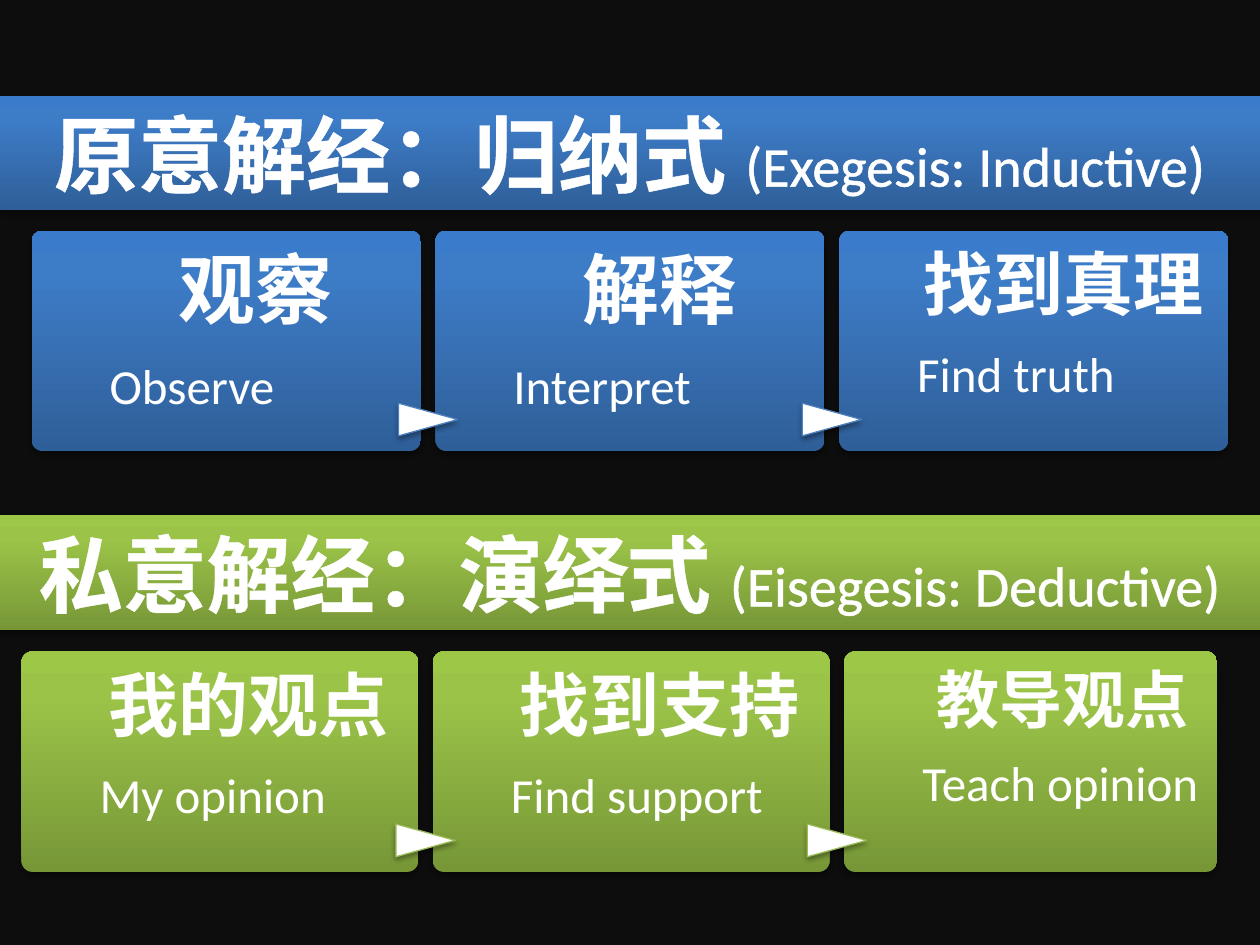
from dataclasses import dataclass

from lxml.etree import SubElement
from pptx import Presentation
from pptx.dml.color import RGBColor
from pptx.enum.shapes import MSO_SHAPE as Shape
from pptx.enum.text import MSO_ANCHOR as Anchor, MSO_AUTO_SIZE as AutoSize, PP_ALIGN as Align
from pptx.oxml.ns import qn
from pptx.util import Inches, Pt


@dataclass(frozen=True)
class Palette:
    stops: tuple  # (position in percent, colour), from the bottom up
    outline: str


class Theme:
    font = "Calibri"
    background = "0D0D0D"
    white = "FFFFFF"
    shadow = "000000"
    blue = Palette(((0, "2F5F99"), (80, "3D7CC7"), (100, "3A7CCB")), "4F81BD")
    green = Palette(((0, "779737"), (80, "9BC348"), (100, "9DC746")), "9BBB59")
    heading_size = 48
    subheading_size = 32
    caption_size = 28


def rgb(colour):
    return RGBColor.from_string(colour)


def add_element(parent, tag, **attributes):
    return SubElement(parent, qn(tag), {k: str(v) for k, v in attributes.items()})


def set_gradient(shape, palette):
    shape.fill.gradient()
    shape.fill.gradient_angle = 90
    stop_list = next(shape._element.spPr.iter(qn("a:gsLst")))
    for stop in list(stop_list):
        stop_list.remove(stop)
    for position, colour in palette.stops:
        stop = add_element(stop_list, "a:gs", pos=position * 1000)
        add_element(stop, "a:srgbClr", val=colour)
    shape.line.fill.background()


def set_shadow(shape):
    shape.shadow.inherit = False
    effects = shape._element.spPr.find(qn("a:effectLst"))
    shadow = add_element(effects, "a:outerShdw", blurRad=Pt(3.1), dist=Pt(1.8),
                         dir=5400000, rotWithShape=0)
    colour = add_element(shadow, "a:srgbClr", val=Theme.shadow)
    add_element(colour, "a:alpha", val=35000)


def add_run(paragraph, text, size, bold):
    run = paragraph.add_run()
    run.text = text
    run.font.name = Theme.font
    run.font.size = Pt(size)
    run.font.bold = bold
    run.font.color.rgb = rgb(Theme.white)
    return run


def outline_run(run):
    properties = run._r.get_or_add_rPr()
    line = add_element(properties, "a:ln", w=Pt(1.45))
    add_element(add_element(line, "a:solidFill"), "a:srgbClr", val=Theme.white)
    properties.insert(0, line)


def space_after_percent(paragraph, percent):
    paragraph.space_after = Pt(0)
    spacing = paragraph._p.pPr.find(qn("a:spcAft"))
    spacing.remove(spacing[0])
    add_element(spacing, "a:spcPct", val=percent * 1000)


def add_heading(slide, box, palette, title, subtitle):
    """Full-width band with a Chinese title and an English gloss."""
    band = slide.shapes.add_shape(Shape.RECTANGLE, *map(Inches, box))
    set_gradient(band, palette)
    set_shadow(band)
    frame = band.text_frame
    frame.word_wrap = True
    frame.auto_size = AutoSize.SHAPE_TO_FIT_TEXT
    paragraph = frame.paragraphs[0]
    paragraph.alignment = Align.CENTER
    outline_run(add_run(paragraph, title + " ", Theme.heading_size, True))
    outline_run(add_run(paragraph, subtitle, Theme.subheading_size, False))


def add_card(shapes, box, palette):
    card = shapes.add_shape(Shape.ROUNDED_RECTANGLE, *map(Inches, box))
    card.adjustments[0] = 0.05
    set_gradient(card, palette)
    set_shadow(card)


def add_arrow(shapes, center_x, center_y, palette):
    """Triangle pointing right, over the gap between two cards."""
    width, height = 0.26, 0.47
    arrow = shapes.add_shape(Shape.FLOWCHART_EXTRACT, Inches(center_x - width / 2),
                             Inches(center_y - height / 2), Inches(width), Inches(height))
    arrow.rotation = 90
    arrow.fill.solid()
    arrow.fill.fore_color.rgb = rgb(Theme.white)
    arrow.line.color.rgb = rgb(palette.outline)
    arrow.line.width = Pt(0.75)
    set_shadow(arrow)


def add_label(shapes, box, term, size, caption):
    label = shapes.add_textbox(*map(Inches, box))
    frame = label.text_frame
    frame.word_wrap = True
    frame.vertical_anchor = Anchor.TOP
    frame.margin_left = frame.margin_right = frame.margin_bottom = 0
    frame.margin_top = Inches(size / 260)
    term_line, caption_line = frame.paragraphs[0], frame.add_paragraph()
    term_line.alignment = Align.CENTER
    add_run(term_line, term, size, True)
    add_run(caption_line, caption, Theme.caption_size, False)
    for paragraph in (term_line, caption_line):
        paragraph.line_spacing = 0.9
        space_after_percent(paragraph, 35)


def add_process(slide, box, palette, steps):
    """Row of cards spread evenly over the box, joined by arrows."""
    left, top, width, height = box
    gap = (width - sum(step[0] for step in steps)) / (len(steps) - 1)
    shapes = slide.shapes.add_group_shape().shapes
    for index, (card_width, term, size, caption) in enumerate(steps):
        add_card(shapes, (left, top, card_width, height), palette)
        if index:
            add_arrow(shapes, left - gap / 2, top + 1.5, palette)
        add_label(shapes, (left + 0.62, top, card_width * 0.75, height), term, size, caption)
        left += card_width + gap


def main():
    deck = Presentation()
    deck.slide_width, deck.slide_height = Inches(10), Inches(7.5)
    slide = deck.slides.add_slide(deck.slide_layouts[6])
    slide.background.fill.solid()
    slide.background.fill.fore_color.rgb = rgb(Theme.background)

    # Headings
    add_heading(slide, (0, 0.76, 10, 0.91), Theme.blue,
                "原意解经：归纳式", "(Exegesis: Inductive)")
    add_heading(slide, (0, 4.09, 10, 0.91), Theme.green,
                "私意解经：演绎式", "(Eisegesis: Deductive)")

    # Steps: card width, term, term size, caption
    add_process(slide, (0.17, 5.17, 9.49, 1.75), Theme.green, [
        (3.15, "我的观点", 40, "My opinion"),
        (3.15, "找到支持", 40, "Find support"),
        (2.96, "教导观点", 36, "Teach opinion"),
    ])
    add_process(slide, (0.25, 1.83, 9.5, 1.75), Theme.blue, [
        (3.09, "观察", 44, "Observe"),
        (3.09, "解释", 44, "Interpret"),
        (3.09, "找到真理", 40, "Find truth"),
    ])
    deck.save("out.pptx")


if __name__ == "__main__":
    main()
